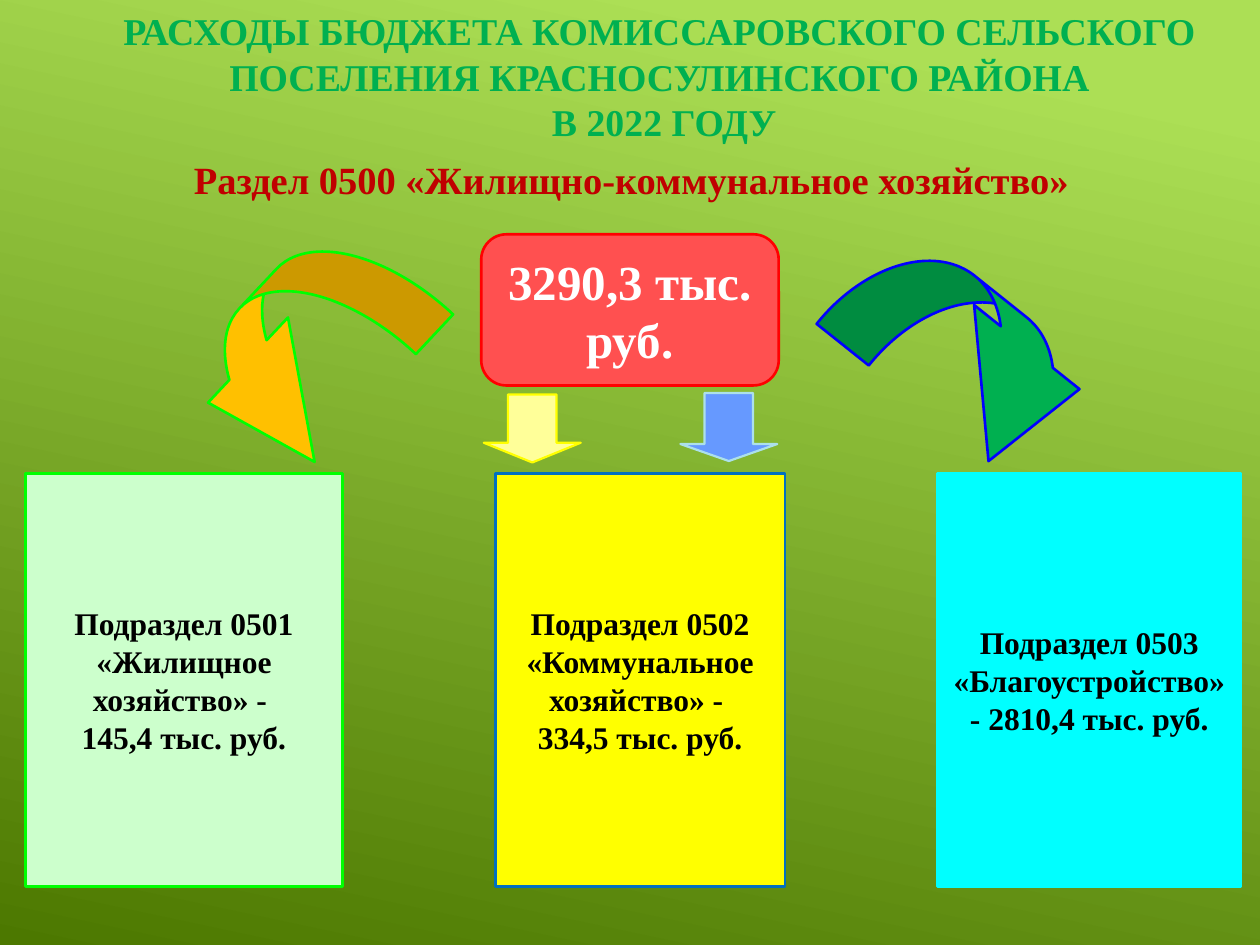
from pptx import Presentation
from pptx.dml.color import RGBColor
from pptx.enum.shapes import MSO_SHAPE as Shape
from pptx.enum.text import MSO_ANCHOR as Anchor, MSO_AUTO_SIZE as AutoSize, PP_ALIGN as Align
from pptx.util import Pt

# Content
TITLE = ("РАСХОДЫ БЮДЖЕТА КОМИССАРОВСКОГО СЕЛЬСКОГО ПОСЕЛЕНИЯ "
         "КРАСНОСУЛИНСКОГО РАЙОНА\v В 2022 ГОДУ")
SECTION = "Раздел 0500 «Жилищно-коммунальное хозяйство»"
TOTAL = "3290,3 тыс. руб."
# Subsections: paragraphs, left, width, fill, line
SUBSECTIONS = [
    (["Подраздел 0501 «Жилищное хозяйство» - ", "145,4 тыс. руб."],
     14.4, 181.4, "CCFFCC", "00FF00"),
    (["Подраздел 0502 «Коммунальное хозяйство» - ", "334,5 тыс. руб."],
     283, 165.6, "FFFF00", "0070C0"),
    (["Подраздел 0503 «Благоустройство» - 2810,4 тыс. руб."],
     535.7, 173.5, "00FFFF", "00FFFF"),
]
# Arrows: preset, frame, rotation, adjustments, fill, line, line width
ARROWS = [
    (Shape.CURVED_UP_ARROW, (100.1, 157, 149, 91.4), 133.2, (0.34, 0.73, 0.74),
     "FFC000", "00FF00", 1.5),
    (Shape.CURVED_DOWN_ARROW, (473, 167, 164.2, 77.8), 38.6, (0.49, 0.99, 0.83),
     "00B050", "0000FF", 1.5),
    (Shape.DOWN_ARROW, (388.8, 224.6, 55.4, 38.9), 0, (0.5, 0.25),
     "6699FF", "ACE0EA", 1.25),
    (Shape.DOWN_ARROW, (276.5, 225.4, 55.4, 38.9), 0, (0.5, 0.29),
     "FFFF99", "FFFF00", 1.25),
]

THEME = {
    "font": "Times New Roman",
    "background": [(0.1, "ACDF55"), (1, "4C7800")],
    "title": (21.6, "00B050"),
    "section": (22, "C00000"),
    "total": (28, "FFFFFF"),
    "subsection": (18, "000000"),
    "total_fill": "FF5050",
    "total_line": "FF0000",
}
BOX_TOP, BOX_HEIGHT = 270.5, 236


def color(value):
    return RGBColor.from_string(value)


def apply(target, values):
    for name, value in values.items():
        setattr(target, name, value)


def place(shape, frame):
    sides = ("left", "top", "width", "height")
    apply(shape, {side: Pt(value) for side, value in zip(sides, frame)})


def write(shape, paragraphs, style, anchor=Anchor.MIDDLE, margins=(7.2, 3.6), spacing=1):
    size, text_color = THEME[style]
    across, down = (Pt(margin) for margin in margins)
    frame = shape.text_frame
    apply(frame, {"word_wrap": True, "auto_size": AutoSize.NONE, "vertical_anchor": anchor,
                  "margin_left": across, "margin_right": across,
                  "margin_top": down, "margin_bottom": down})
    for index, text in enumerate(paragraphs):
        para = frame.add_paragraph() if index else frame.paragraphs[0]
        para.text = text
        apply(para, {"alignment": Align.CENTER, "line_spacing": spacing})
        for span in para.runs:
            apply(span.font, {"name": THEME["font"], "size": Pt(size), "bold": True})
            span.font.color.rgb = color(text_color)


def add_shape(page, preset, frame, fill, line, line_width=1.5):
    shape = page.shapes.add_shape(preset, *(Pt(value) for value in frame))
    shape.shadow.inherit = False
    shape.fill.solid()
    shape.fill.fore_color.rgb = color(fill)
    shape.line.color.rgb = color(line)
    shape.line.width = Pt(line_width)
    return shape


def main():
    deck = Presentation()
    apply(deck, {"slide_width": Pt(720), "slide_height": Pt(540)})
    page = deck.slides.add_slide(deck.slide_layouts[5])

    # Background gradient
    fill = page.background.fill
    fill.gradient()
    fill.gradient_angle = 258
    for stop, (position, value) in zip(fill.gradient_stops, THEME["background"]):
        stop.position = position
        stop.color.rgb = color(value)

    # Title
    title = page.shapes.title
    place(title, (33.8, 15.1, 686.2, 56.9))
    write(title, [TITLE], "title")

    # Total
    total = add_shape(page, Shape.ROUNDED_RECTANGLE, (275, 133.9, 170, 86.4),
                      THEME["total_fill"], THEME["total_line"])
    write(total, [TOTAL], "total", margins=(10, 3.6))

    # Subsection boxes
    for paragraphs, left, width, box_fill, line in SUBSECTIONS:
        box = add_shape(page, Shape.RECTANGLE, (left, BOX_TOP, width, BOX_HEIGHT),
                        box_fill, line)
        write(box, paragraphs, "subsection", margins=(8.6, 0))

    # Arrows from the total to the subsections
    for preset, frame, rotation, adjustments, arrow_fill, line, line_width in ARROWS:
        arrow = add_shape(page, preset, frame, arrow_fill, line, line_width)
        arrow.rotation = rotation
        for index, value in enumerate(adjustments):
            arrow.adjustments[index] = value

    # Section heading
    section = page.shapes.add_textbox(Pt(36.7), Pt(88.6), Pt(648), Pt(39.6))
    write(section, [SECTION], "section", anchor=Anchor.TOP, spacing=0.9)

    deck.save("out.pptx")


if __name__ == "__main__":
    main()
